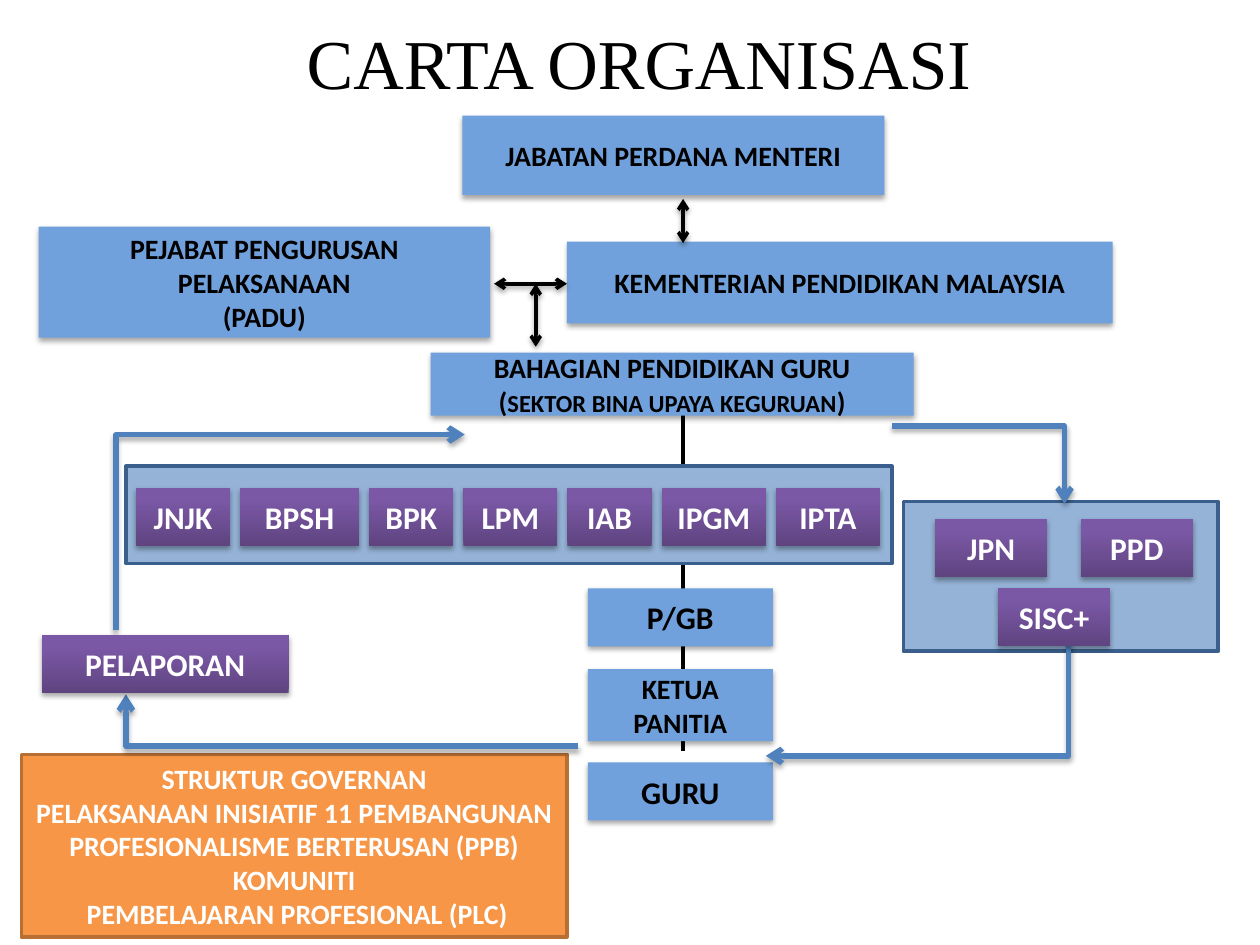
from dataclasses import dataclass

from lxml.etree import SubElement
from pptx import Presentation
from pptx.dml.color import RGBColor
from pptx.enum.shapes import MSO_CONNECTOR as CONN, MSO_SHAPE as SHAPE
from pptx.enum.text import MSO_ANCHOR as ANCHOR, PP_ALIGN as ALIGN
from pptx.oxml.ns import qn
from pptx.util import Cm, Pt


@dataclass(frozen=True)
class Theme:
    font: str = "Calibri"
    title_font: str = "Times New Roman"
    black: str = "000000"
    white: str = "FFFFFF"
    blue: str = "71A1DC"
    panel: str = "95B3D7"
    panel_line: str = "3A5F8C"
    purple_dark: str = "5F4480"
    purple: str = "7B58A6"
    orange: str = "F79646"
    orange_line: str = "B76F34"
    flow: str = "4F81BD"
    title: int = 40
    large: int = 18
    medium: int = 16
    small: int = 14


T = Theme()
UNIT_H = 1.17  # height of the small unit boxes
SPINE_X = 13.77


def rgb(value):
    return RGBColor.from_string(value)


def set_shadow(sp, alpha=35, dist=1.8):
    """Soft shadow straight below the object."""
    effects = SubElement(sp._element.spPr, qn("a:effectLst"))
    outer = SubElement(effects, qn("a:outerShdw"), blurRad=str(Pt(3.1)),
                       dist=str(Pt(dist)), dir="5400000", rotWithShape="0")
    color = SubElement(outer, qn("a:srgbClr"), val=T.black)
    SubElement(color, qn("a:alpha"), val=str(alpha * 1000))


def write(sp, text, size=T.medium, color=T.black, font=T.font, bold=True):
    """One paragraph per line; a line is a string or a list of (text, size)."""
    tf = sp.text_frame
    tf.word_wrap = True
    tf.vertical_anchor = ANCHOR.MIDDLE
    lines = text.split("\n") if isinstance(text, str) else text
    for i, line in enumerate(lines):
        p = tf.paragraphs[0] if i == 0 else tf.add_paragraph()
        p.alignment = ALIGN.CENTER
        for part, pt in [(line, size)] if isinstance(line, str) else line:
            r = p.add_run()
            r.text = part
            r.font.name, r.font.size, r.font.bold = font, Pt(pt), bold
            r.font.color.rgb = rgb(color)


def add_rect(slide, x, y, w, h, fill=None, line=None):
    sp = slide.shapes.add_shape(SHAPE.RECTANGLE, Cm(x), Cm(y), Cm(w), Cm(h))
    if fill:
        sp.fill.solid()
        sp.fill.fore_color.rgb = rgb(fill)
    if line:
        sp.line.color.rgb = rgb(line)
        sp.line.width = Pt(2)
        sp.shadow.inherit = False
    else:
        sp.line.fill.background()
    return sp


def add_box(slide, x, y, w, h, text, size=T.medium):
    sp = add_rect(slide, x, y, w, h, T.blue)
    set_shadow(sp)
    write(sp, text, size)


def add_unit(slide, x, y, w, text):
    sp = add_rect(slide, x, y, w, UNIT_H)
    sp.fill.gradient()
    sp.fill.gradient_angle = 90
    dark, light = sp.fill.gradient_stops
    dark.color.rgb, dark.position = rgb(T.purple_dark), 0
    light.color.rgb, light.position = rgb(T.purple), 0.8
    set_shadow(sp)
    write(sp, text, T.large, T.white)


def add_line(slide, x1, y1, x2, y2, color=T.black, width=2, ends=(), kind=CONN.STRAIGHT):
    c = slide.shapes.add_connector(kind, Cm(x1), Cm(y1), Cm(x2), Cm(y2))
    c.line.color.rgb = rgb(color)
    c.line.width = Pt(width)
    for end in ends:
        SubElement(c.line._get_or_add_ln(), qn(f"a:{end}"), type="arrow")
    return c


def add_spine(slide, y1, y2):
    c = add_line(slide, SPINE_X, y1, SPINE_X, y2)
    SubElement(c._element.spPr, qn("a:effectLst"))


def add_two_way(slide, x1, y1, x2, y2):
    set_shadow(add_line(slide, x1, y1, x2, y2, ends=("headEnd", "tailEnd")), 38, 1.6)


def add_flow(slide, x1, y1, x2, y2, end):
    """Single bend: across from the first point, then up or down to the second."""
    c = add_line(slide, x1, y1, x2, y2, T.flow, 3, (end,), CONN.ELBOW)
    c._element.spPr.find(qn("a:prstGeom")).set("prst", "bentConnector2")
    set_shadow(c)


def main():
    prs = Presentation()
    prs.slide_width, prs.slide_height = Cm(25.4), Cm(19.05)
    slide = prs.slides.add_slide(prs.slide_layouts[6])

    # Title
    title = slide.shapes.add_textbox(Cm(1.45), Cm(0.36), Cm(22.86), Cm(1.75))
    write(title, "CARTA ORGANISASI", T.title, font=T.title_font, bold=False)

    # Panels and the spine behind the boxes
    add_rect(slide, 18.21, 10.11, 6.35, 3.02, T.panel, T.panel_line)
    add_spine(slide, 7.14, 15.14)
    add_rect(slide, 2.54, 9.4, 15.44, 1.96, T.panel, T.panel_line)

    # Blue boxes, from the top down
    sector = ["BAHAGIAN PENDIDIKAN GURU",
              [("(", T.medium), ("SEKTOR BINA UPAYA KEGURUAN", T.small), (")", T.medium)]]
    for box in [
        (9.32, 2.33, 8.51, 1.6, "JABATAN PERDANA MENTERI"),
        (0.78, 4.57, 9.1, 2.24, "PEJABAT PENGURUSAN PELAKSANAAN\n(PADU)"),
        (11.43, 4.87, 11, 1.65, "KEMENTERIAN PENDIDIKAN MALAYSIA"),
        (8.68, 7.11, 9.74, 1.27, sector),
        (11.85, 11.86, 3.73, UNIT_H, "P/GB", T.large),
        (11.85, 13.49, 3.73, 1.45, "KETUA PANITIA"),
        (11.85, 15.37, 3.73, UNIT_H, "GURU", T.large),
    ]:
        add_box(slide, *box)

    # Row of units, equal gaps
    x = 2.74
    for text, w in [("JNJK", 1.9), ("BPSH", 2.4), ("BPK", 1.7), ("LPM", 1.9),
                    ("IAB", 1.7), ("IPGM", 2.1), ("IPTA", 2.1)]:
        add_unit(slide, x, 9.83, w, text)
        x += w + 0.2

    # Governance note
    note = add_rect(slide, 0.43, 15.21, 11, 3.68, T.orange, T.orange_line)
    write(note, "STRUKTUR GOVERNAN\n"
                "PELAKSANAAN INISIATIF 11 PEMBANGUNAN PROFESIONALISME BERTERUSAN (PPB) KOMUNITI\n"
                " PEMBELAJARAN PROFESIONAL (PLC)", color=T.white)

    # Flow arrows around the chart
    add_flow(slide, 17.98, 8.59, 21.46, 10.16, "tailEnd")
    add_flow(slide, 15.44, 15.24, 21.54, 12.01, "headEnd")
    add_flow(slide, 11.66, 15.04, 2.54, 14, "tailEnd")
    add_flow(slide, 9.37, 8.76, 2.34, 12.7, "headEnd")

    # Two-way arrows between offices
    add_two_way(slide, 9.96, 5.72, 11.43, 5.72)
    add_two_way(slide, SPINE_X, 4.9, SPINE_X, 4.01)
    add_two_way(slide, 10.8, 6.99, 10.8, 5.72)

    # State and district units, reporting
    for unit in [(18.85, 10.46, 2.26, "JPN"), (21.79, 10.46, 2.26, "PPD"),
                 (20.12, 11.86, 2.26, "SISC+"), (0.84, 12.8, 4.98, "PELAPORAN")]:
        add_unit(slide, *unit)

    prs.save("out.pptx")


if __name__ == "__main__":
    main()
